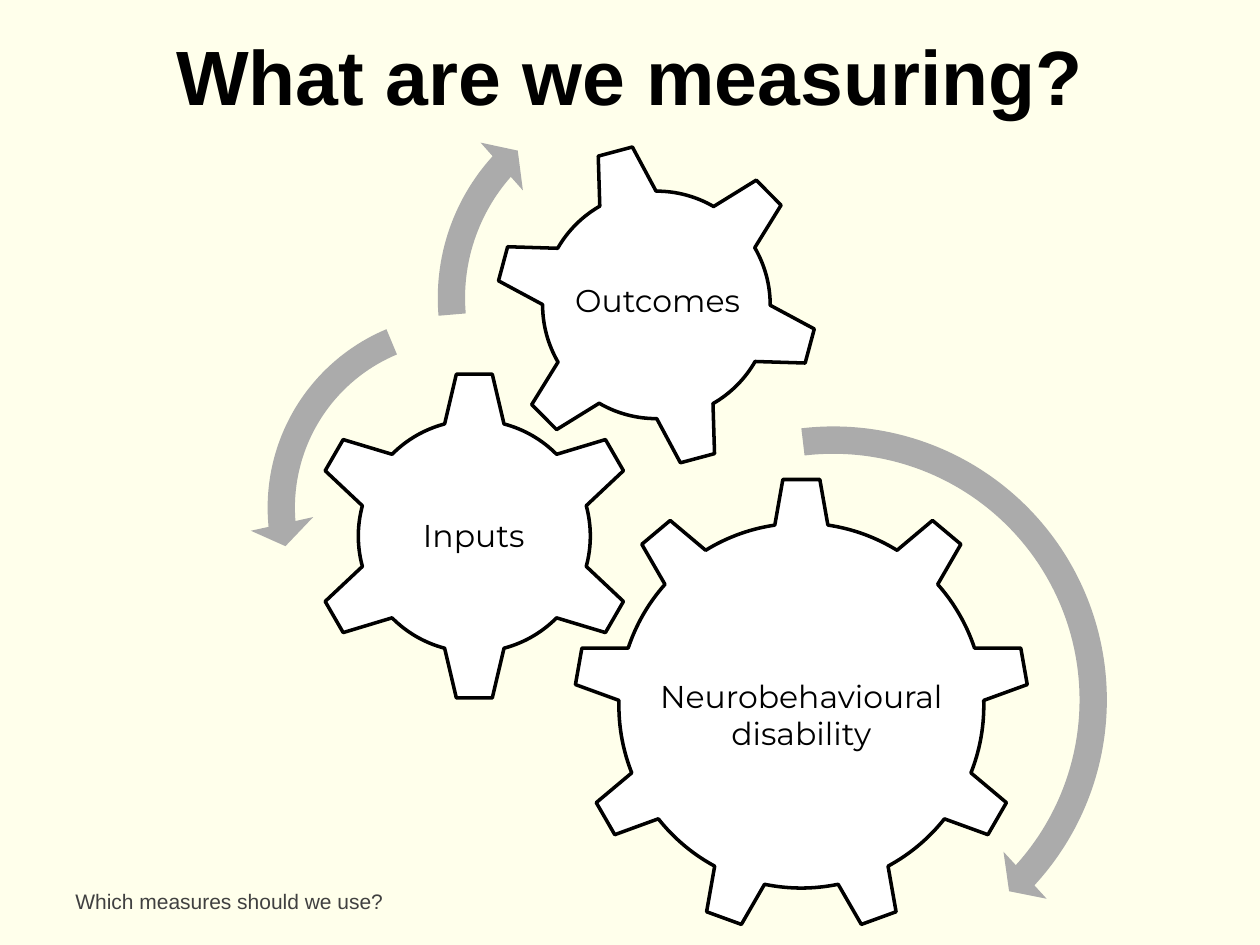
from dataclasses import dataclass

from pptx import Presentation
from pptx import util as u
from pptx.dml import color
from pptx.enum import shapes, text

KIND = shapes.MSO_SHAPE


@dataclass(frozen=True)
class Theme:
    back: str = "FFFFEB"
    ink: str = "000000"
    note: str = "404040"
    gear: str = "FFFFFF"
    arrow: str = "ABABAB"
    head: str = "Arial"
    body: str = "Montserrat"
    big: int = 44
    mid: int = 18
    small: int = 12
    line: int = 2


THEME = Theme()


def rgb(code):
    return color.RGBColor.from_string(code)


def inches(box):
    return [u.Inches(n) for n in box]


def write(shape, words, size=THEME.mid, font=THEME.body, ink=THEME.ink,
          bold=False, align=text.PP_ALIGN.CENTER,
          anchor=text.MSO_ANCHOR.TOP, fit=text.MSO_AUTO_SIZE.NONE):
    frame = shape.text_frame
    frame.word_wrap = True
    frame.auto_size = fit
    frame.vertical_anchor = anchor
    para = frame.paragraphs[0]
    para.alignment = align
    run = para.add_run()
    run.text = words
    run.font.size = u.Pt(size)
    run.font.name = font
    run.font.bold = bold
    run.font.color.rgb = rgb(ink)


def add_form(group, kind, box, fill):
    form = group.shapes.add_shape(kind, *inches(box))
    form.shadow.inherit = False
    form.fill.solid()
    form.fill.fore_color.rgb = rgb(fill)
    return form


def add_gear(group, kind, box, turn=0):
    gear = add_form(group, kind, box, THEME.gear)
    gear.rotation = turn
    gear.line.color.rgb = rgb(THEME.ink)
    gear.line.width = u.Pt(THEME.line)


def add_arrow(group, kind, box, band, tip, end, start, head):
    arrow = add_form(group, kind, box, THEME.arrow)
    arrow.line.fill.background()
    sizes = [band / 100, tip * 0.6, end * 0.6, start * 0.6, head / 100]
    for index, size in enumerate(sizes):
        arrow.adjustments[index] = size


def add_title(slide, box):
    title = slide.shapes.title
    title.left, title.top, title.width, title.height = inches(box)
    write(title, "What are we measuring?", size=THEME.big, font=THEME.head,
          bold=True, anchor=text.MSO_ANCHOR.MIDDLE)


def add_gears(slide):
    group = slide.shapes.add_group_shape()
    add_gear(group, KIND.GEAR_9, (4.55, 3.79, 3.62, 3.62))
    add_gear(group, KIND.GEAR_6, (2.45, 2.94, 2.63, 2.63))
    add_gear(group, KIND.GEAR_6, (3.92, 1.13, 2.58, 2.58), turn=345)
    add_arrow(group, KIND.CIRCULAR_ARROW, (4.3, 3.24, 4.63, 4.63),
              band=4.69, tip=4.98, end=42.46, start=263.26, head=5.47)
    add_arrow(group, KIND.LEFT_CIRCULAR_ARROW, (1.98, 2.35, 3.36, 3.36),
              band=6.45, tip=7.17, end=174.82, start=247.3, head=7.53)
    add_arrow(group, KIND.CIRCULAR_ARROW, (3.33, 0.55, 3.63, 3.63),
              band=5.98, tip=6.57, end=221.9, start=175.14, head=6.98)


def add_label(slide, words, box):
    label = slide.shapes.add_textbox(*inches(box))
    write(label, words, fit=text.MSO_AUTO_SIZE.SHAPE_TO_FIT_TEXT)


def add_note(slide, box):
    note = slide.shapes.add_textbox(*inches(box))
    write(note, "Which measures should we use?", size=THEME.small,
          font=THEME.head, ink=THEME.note, align=text.PP_ALIGN.LEFT,
          anchor=text.MSO_ANCHOR.MIDDLE)


def main():
    deck = Presentation()
    deck.slide_width, deck.slide_height = inches((10, 7.5))
    slide = deck.slides.add_slide(deck.slide_layouts[5])
    slide.background.fill.solid()
    slide.background.fill.fore_color.rgb = rgb(THEME.back)
    add_gears(slide)
    add_title(slide, (0.5, -0.03, 9, 1.25))
    add_note(slide, (0.5, 6.95, 3.17, 0.4))
    add_label(slide, "Neurobehavioural disability", (5.04, 5.32, 2.64, 0.71))
    add_label(slide, "Inputs", (2.44, 4.05, 2.64, 0.4))
    add_label(slide, "Outcomes", (3.9, 2.18, 2.64, 0.4))
    deck.save("out.pptx")


if __name__ == "__main__":
    main()
